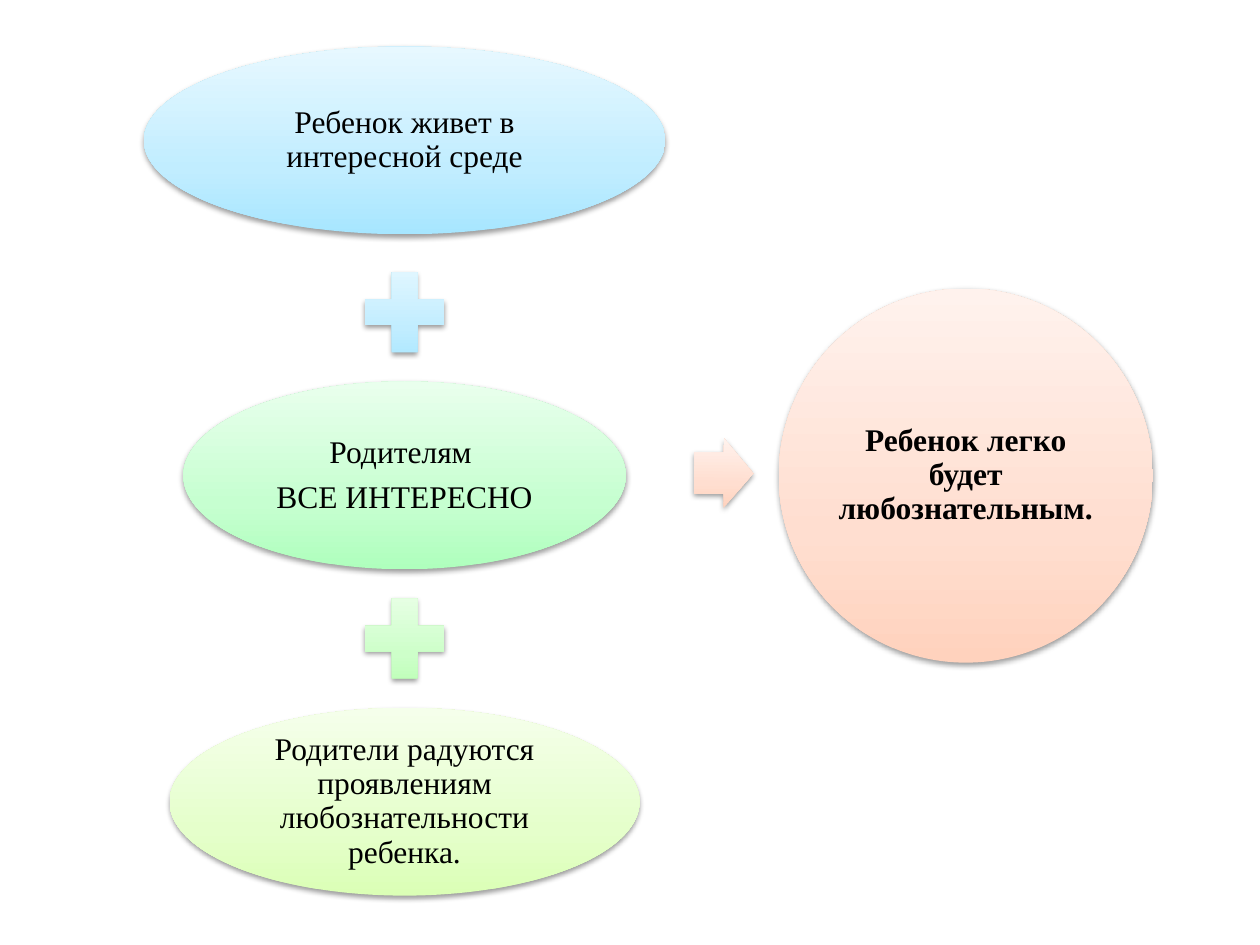
"""Build a slide where three conditions add up to a curious child."""
from pptx import Presentation
from pptx import util as u
from pptx.dml.color import RGBColor
from pptx.enum import shapes, text
from pptx.oxml import parse_xml
from pptx.oxml.ns import nsdecls

COLORS = {
    "blue": ("A7E6FF", "C1EDFF", "E7F8FF"),
    "mint": ("AFFFBD", "C6FFD0", "E9FFED"),
    "green": ("B9FFB2", "CDFFC9", "ECFFEA"),
    "lime": ("DBFFB6", "E5FFCB", "F5FFEB"),
    "peach": ("FFD2BD", "FFDED0", "FFF2ED"),
    "text": "000000",
}
STOPS = (0, 35000, 100000)
FONT, FONT_SIZE = "Times New Roman", 18

CONDITIONS = [
    {"lines": ["Ребенок живет в интересной среде"], "color": "blue", "width": 298},
    {"lines": ["Родителям ", "ВСЕ ИНТЕРЕСНО"], "color": "mint", "width": 252.8},
    {"lines": ["Родители радуются проявлениям любознательности ребенка."],
     "color": "lime", "width": 268.6},
]
PLUSES = [{"color": "blue", "gap_above": 13.5}, {"color": "green", "gap_above": 8.6}]
RESULT = ["Ребенок легко будет любознательным."]

COLUMN_CENTER, COLUMN_TOP = 231.2, 26.6
OVAL_HEIGHT, PLUS_SIZE, GAP_BELOW_PLUS = 107.3, 62, 8.6
ARROW_BOX = (396.7, 250.6, 33.8, 39.6)
RESULT_BOX = (445, 164.9, 213.8, 213.8)


def add_glossy_shape(slide, kind, box, color):
    shape = slide.shapes.add_shape(kind, *(u.Pt(value) for value in box))
    shape.line.fill.background()
    shape.shadow.inherit = False
    stops = "".join(
        f'<a:gs pos="{position}"><a:srgbClr val="{value}"/></a:gs>'
        for position, value in zip(STOPS, COLORS[color]))
    properties = shape._element.spPr
    properties.insert(2, parse_xml(
        f'<a:gradFill {nsdecls("a")} rotWithShape="1"><a:gsLst>{stops}</a:gsLst>'
        '<a:lin ang="16200000" scaled="0"/></a:gradFill>'))
    properties[-1].append(parse_xml(
        f'<a:outerShdw {nsdecls("a")} blurRad="{u.Pt(3.1)}" dist="{u.Pt(1.6)}" '
        'dir="5400000" rotWithShape="0"><a:srgbClr val="000000">'
        '<a:alpha val="38000"/></a:srgbClr></a:outerShdw>'))
    return shape


def add_oval(slide, box, color, lines, bold=False):
    frame = add_glossy_shape(slide, shapes.MSO_SHAPE.OVAL, box, color).text_frame
    frame.word_wrap = True
    frame.vertical_anchor = text.MSO_ANCHOR.MIDDLE
    frame.margin_left = frame.margin_right = u.Pt(2)
    frame.margin_top = frame.margin_bottom = u.Pt(2)
    frame.text = "\n".join(lines)
    for paragraph in frame.paragraphs:
        paragraph.alignment = text.PP_ALIGN.CENTER
        paragraph.line_spacing = 0.9
        paragraph.space_after = u.Pt(6.3)
        paragraph.font.name = FONT
        paragraph.font.size = u.Pt(FONT_SIZE)
        paragraph.font.bold = bold
        paragraph.font.color.rgb = RGBColor.from_string(COLORS["text"])


def main():
    presentation = Presentation()
    presentation.slide_width, presentation.slide_height = u.Pt(720), u.Pt(540)
    slide = presentation.slides.add_slide(presentation.slide_layouts[6])

    top = COLUMN_TOP
    for index, condition in enumerate(CONDITIONS):
        if index:
            plus = PLUSES[index - 1]
            top += plus["gap_above"]
            box = (COLUMN_CENTER - PLUS_SIZE / 2, top, PLUS_SIZE, PLUS_SIZE)
            add_glossy_shape(slide, shapes.MSO_SHAPE.MATH_PLUS, box, plus["color"])
            top += PLUS_SIZE + GAP_BELOW_PLUS
        width = condition["width"]
        box = (COLUMN_CENTER - width / 2, top, width, OVAL_HEIGHT)
        add_oval(slide, box, condition["color"], condition["lines"])
        top += OVAL_HEIGHT

    arrow = add_glossy_shape(slide, shapes.MSO_SHAPE.RIGHT_ARROW, ARROW_BOX, "peach")
    arrow.adjustments[0] = 0.6
    arrow.adjustments[1] = 0.5
    arrow.rotation = 0.5
    add_oval(slide, RESULT_BOX, "peach", RESULT, bold=True)
    presentation.save("out.pptx")


if __name__ == "__main__":
    main()
